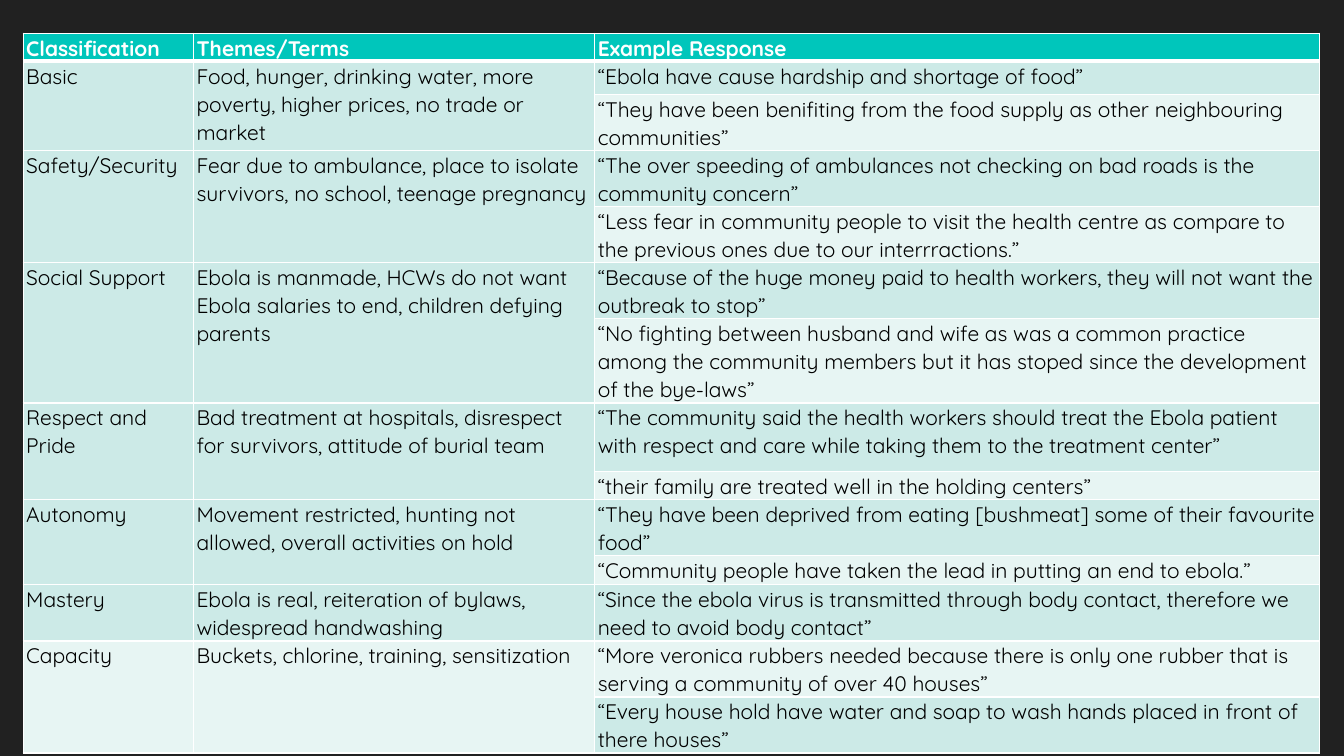
"""Build a slide with a table of community responses by classification."""
from lxml import etree
from pptx import Presentation, util as u
from pptx.dml.color import RGBColor
from pptx.oxml import ns

PX = 9144
COLORS = {"page": "212121", "header": "00C6BB", "dark": "CCEAE7",
          "light": "E7F5F3", "text": "000000", "line": "FFFFFF"}
COLUMNS = [169, 398, 719]
ROWS = [15, 33, 40, 40, 54, 40, 68, 68, 27, 40, 29, 54, 54, 40]
HEADINGS = ["Classification", "Themes/Terms", "Example Response"]
GROUPS = [
    ("Basic",
     "Food, hunger, drinking water, more poverty, higher prices, no trade or market",
     ["“Ebola have cause hardship and shortage of food”",
      "“They have been benifiting from the food supply as other neighbouring communities”"]),
    ("Safety/Security",
     "Fear due to ambulance, place to isolate survivors, no school, teenage pregnancy",
     ["“The over speeding of ambulances not checking on bad roads is the community concern”",
      "“Less fear in community people to visit the health centre as compare to the previous "
      "ones due to our interrractions.”"]),
    ("Social Support",
     "Ebola is manmade, HCWs do not want Ebola salaries to end, children defying parents",
     ["“Because of the huge money paid to health workers, they will not want the outbreak to stop”",
      "“No fighting between husband and wife as was a common practice among the community "
      "members but it has stoped since the development of the bye-laws”"]),
    ("Respect and Pride",
     "Bad treatment at hospitals, disrespect for survivors, attitude of burial team",
     ["“The community said the health workers should treat the Ebola patient with respect "
      "and care while taking them to the treatment center”",
      "“their family are treated well in the holding centers”"]),
    ("Autonomy",
     "Movement restricted, hunting not allowed, overall activities on hold",
     ["“They have been deprived from eating [bushmeat] some of their favourite food”",
      "“Community people have taken the lead in putting an end to ebola.”"]),
    ("Mastery",
     "Ebola is real, reiteration of bylaws, widespread handwashing",
     ["“Since the ebola virus is transmitted through body contact, therefore we need to "
      "avoid body contact”"]),
    ("Capacity",
     "Buckets, chlorine, training, sensitization",
     ["“More veronica rubbers needed because there is only one rubber that is serving a "
      "community of over 40 houses”",
      "“Every house hold have water and soap to wash hands placed in front of there houses”"]),
]


def write(cell, content, color="text", bold=False):
    p = cell.text_frame.paragraphs[0]
    p.line_spacing = 1.07
    r = p.add_run()
    r.text = content
    r.font.name = "Quicksand"
    r.font.size = u.Pt(15)
    r.font.bold = bold
    r.font.color.rgb = RGBColor.from_string(COLORS[color])


prs = Presentation()
prs.slide_width, prs.slide_height = 1333 * PX, 750 * PX
s = prs.slides.add_slide(prs.slide_layouts[6])
s.background.fill.solid()
s.background.fill.fore_color.rgb = RGBColor.from_string(COLORS["page"])

table = s.shapes.add_table(len(ROWS), len(COLUMNS), 23 * PX, 33 * PX,
                           sum(COLUMNS) * PX, sum(ROWS) * PX).table
for column, width in zip(table.columns, COLUMNS):
    column.width = width * PX
for i, (row, height) in enumerate(zip(table.rows, ROWS)):
    row.height = height * PX
    band = "header" if i == 0 else "dark" if i % 2 else "light"
    for cell in row.cells:
        cell.margin_left = cell.margin_right = 3 * PX
        cell.margin_top = cell.margin_bottom = 0
        tc_pr = cell._tc.get_or_add_tcPr()
        for side in "LRTB":
            thick = (i == 0 and side == "B") or (i == 1 and side == "T")
            ln = etree.SubElement(tc_pr, ns.qn("a:ln" + side), w=str(u.Pt(3 if thick else 1)))
            fill = etree.SubElement(ln, ns.qn("a:solidFill"))
            etree.SubElement(fill, ns.qn("a:srgbClr"), val=COLORS["line"])
        cell.fill.solid()
        cell.fill.fore_color.rgb = RGBColor.from_string(COLORS[band])

for j, heading in enumerate(HEADINGS):
    write(table.cell(0, j), heading, color="line", bold=True)

top = 1
for name, themes, quotes in GROUPS:
    bottom = top + len(quotes) - 1
    for j, content in enumerate([name, themes]):
        if bottom > top:
            table.cell(top, j).merge(table.cell(bottom, j))
        write(table.cell(top, j), content)
    for i, quote in enumerate(quotes, top):
        write(table.cell(i, 2), quote)
    top = bottom + 1

prs.save("out.pptx")
